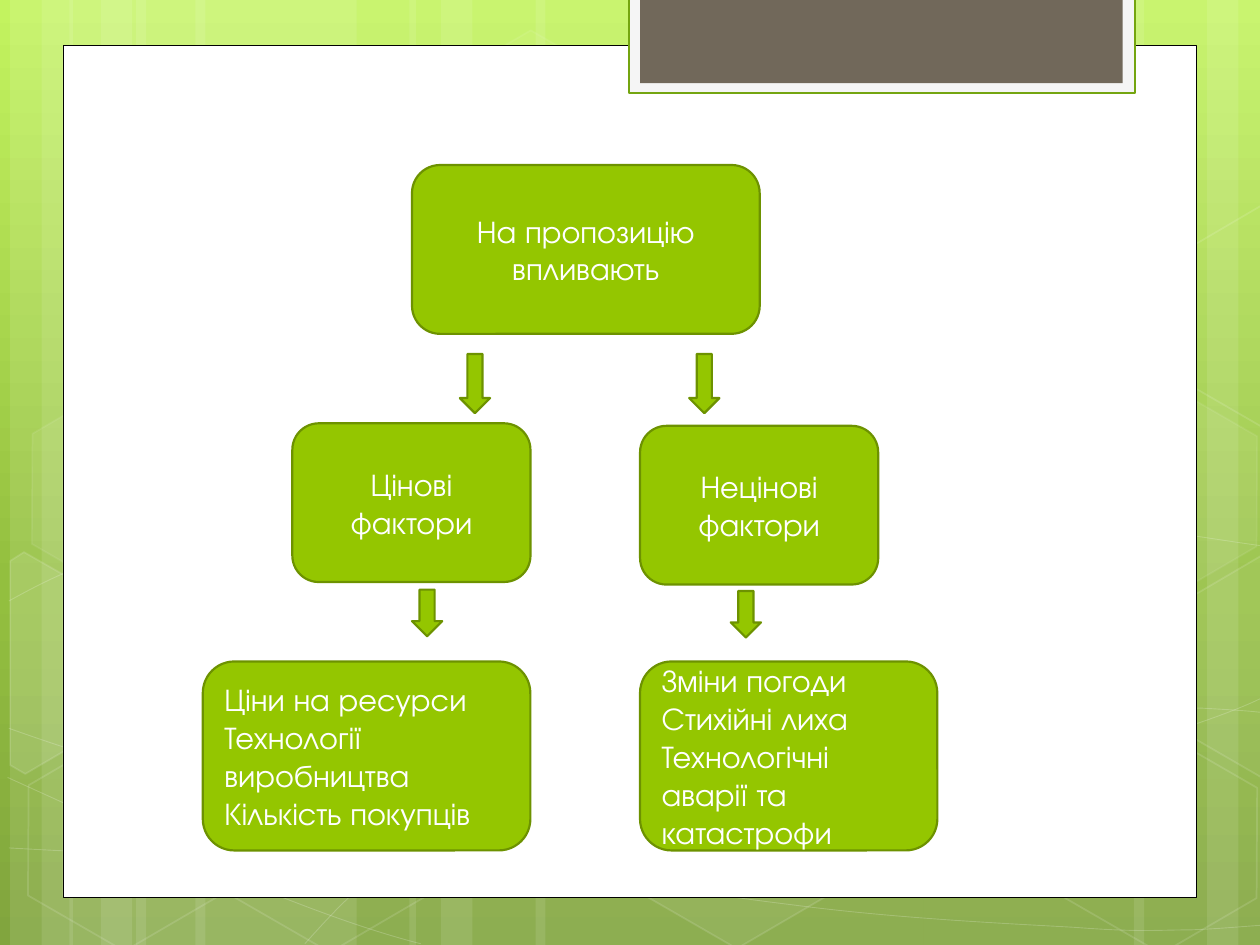
from copy import deepcopy
from math import cos, radians, sin
from lxml.etree import SubElement
from pptx import Presentation
from pptx.dml.color import RGBColor
from pptx.enum.shapes import MSO_SHAPE as Kind
from pptx.enum.text import MSO_ANCHOR as Anchor, PP_ALIGN as Align
from pptx.oxml.ns import qn
from pptx.util import Inches, Pt

WHITE = RGBColor(0xFF, 0xFF, 0xFF)
BLACK = RGBColor(0x00, 0x00, 0x00)
GREEN = RGBColor(0x94, 0xC6, 0x00)
EDGE = RGBColor(0x6D, 0x92, 0x00)
PALE = RGBColor(0xF5, 0xF5, 0xF5)
RIM = RGBColor(0x74, 0xA5, 0x10)
BROWN = RGBColor(0x71, 0x68, 0x5A)
SKY = [
    (0, RGBColor(0xC3, 0xF3, 0x5F)),
    (0.62, RGBColor(0x93, 0xBF, 0x3F)),
    (1, RGBColor(0x81, 0xA5, 0x3E)),
]

FONT = {"name": "TeX Gyre Adventor", "size": Pt(18)}
FRAME = {"word_wrap": True, "vertical_anchor": Anchor.MIDDLE}
TILT = 30

BOXES = [
    (3.27, 1.31, 2.76, 1.34, Align.CENTER, ["На пропозицію впливають"]),
    (2.32, 3.36, 1.89, 1.26, Align.CENTER, ["Цінові фактори"]),
    (5.08, 3.38, 1.89, 1.26, Align.CENTER, ["Нецінові фактори"]),
    (1.61, 5.25, 2.6, 1.5, Align.LEFT,
     ["Ціни на ресурси", "Технології виробництва", "Кількість покупців"]),
    (5.08, 5.25, 2.36, 1.5, Align.LEFT,
     ["Зміни погоди", "Стихійні лиха", "Технологічні аварії та катастрофи"]),
]
ARROWS = [(5.47, 2.81, 0.47), (3.65, 2.81, 0.47), (3.27, 4.68, 0.37), (5.8, 4.69, 0.37)]

BANDS = [
    (1.08, 1.75), (0.08, 0.5), (0.33, 0.83), (1.55, 1.75), (0.55, 0.5), (0.8, 0.83),
    (7.33, 1.75), (9.58, 0.5), (9, 0.83), (4.25, 3.08), (3.25, 0.5), (3.5, 0.83),
]
CURVES = [
    [(0.07, 6.73), (0.61, 6.76), (1.15, 6.79), (1.9, 6.78), (2.65, 6.77), (3.58, 6.75),
     (4.58, 6.65), (5.58, 6.55), (7, 6.36), (7.92, 6.17), (8.83, 5.98), (9.77, 5.68),
     (10.07, 5.51)],
    [(0.07, 4.77), (0.36, 4.61), (0.65, 4.46), (1.21, 4.31), (1.78, 4.16), (2.59, 3.94),
     (3.47, 3.87), (4.36, 3.8), (5.44, 3.79), (6.54, 3.87), (7.64, 3.95), (9.47, 4.26),
     (10.07, 4.34)],
    [(0.06, 6.17), (1.27, 6.72), (2.47, 7.27), (3.34, 7.49)],
    [(0.07, 5.78), (0.38, 5.89), (0.7, 6), (1.28, 6.16), (1.86, 6.31), (2.73, 6.56),
     (3.57, 6.73), (4.4, 6.9), (5.45, 7.08), (6.28, 7.18), (7.11, 7.29), (8, 7.33),
     (8.53, 7.36), (9.05, 7.4), (9.19, 7.38), (9.45, 7.38), (9.71, 7.37), (9.89, 7.35),
     (10.07, 7.34)],
    [(2.42, 7.49), (2.6, 7.29), (2.78, 7.09), (3.02, 6.91), (3.26, 6.73), (3.6, 6.53),
     (3.88, 6.39), (4.16, 6.25), (4.33, 6.19), (4.7, 6.09), (5.06, 5.99), (5.73, 5.85),
     (6.08, 5.78), (6.44, 5.71), (6.49, 5.71), (6.8, 5.69), (7.11, 5.66), (7.6, 5.63),
     (7.94, 5.62), (8.29, 5.61), (8.86, 5.62), (8.86, 5.62), (9.08, 5.62), (9.31, 5.62),
     (9.53, 5.62), (9.71, 5.63), (9.88, 5.64), (9.97, 5.65), (10.06, 5.66), (10.03, 5.65),
     (10.06, 5.66)],
]
HEXES = [
    (3.34, 0.36, 4, 8), (4.97, 5.89, 6, 12), (0.11, 5.91, None, 12), (0.14, 3.12, 7, 8),
    (1.74, 5.92, None, 12), (8.34, 5.93, None, 12), (8.34, 3.14, 7, 8),
]
SHARDS = [
    ((0.36, 5.35), 10, [(0.08, 4.45), (0.19, 4.38), (0.96, 4.82), (0.95, 5.7),
                        (0.2, 6.14), (0.08, 6.07)]),
    ((9.85, 5.2), 4, [(9.26, 4.85), (10.01, 4.41), (10.09, 4.46), (10.09, 6.13),
                      (10.02, 6.17), (9.26, 5.73)]),
    ((9.85, 2.41), None, [(9.26, 2.07), (10.01, 1.63), (10.1, 1.68), (10.09, 3.35),
                          (10.02, 3.39), (9.26, 2.95)]),
]


def fade(part, alpha):
    if alpha is not None:
        for tint in part.xpath("./a:solidFill/a:srgbClr"):
            SubElement(tint, qn("a:alpha")).set("val", str(alpha * 1000))


def paint(shape, fill=None, line=None, width=1.25, clear=None, thin=None):
    shape.shadow.inherit = False
    if fill is None:
        shape.fill.background()
    else:
        shape.fill.solid()
        shape.fill.fore_color.rgb = fill
        fade(shape._element.spPr, clear)
    if line is None:
        shape.line.fill.background()
    else:
        shape.line.color.rgb = line
        shape.line.width = Pt(width)
        fade(shape.line._ln, thin)
    return shape


def place(kind, *rect, **look):
    return paint(shapes.add_shape(kind, *map(Inches, rect)), **look)


def trace(points, close, **look):
    spots = [(Inches(x), Inches(y)) for x, y in points]
    pen = shapes.build_freeform(*spots[0])
    pen.add_line_segments(spots[1:], close=close)
    return paint(pen.convert_to_shape(), **look)


def bend(shape):
    route = shape._element.xpath(".//a:path")[0]
    legs = route.findall(qn("a:lnTo"))
    for i in range(0, len(legs), 3):
        arc = SubElement(route, qn("a:cubicBezTo"))
        for leg in legs[i:i + 3]:
            arc.append(leg[0])
            route.remove(leg)


def turn(point, hub, angle):
    dx, dy = point[0] - hub[0], point[1] - hub[1]
    c, s = cos(radians(angle)), sin(radians(angle))
    return hub[0] + dx * c - dy * s, hub[1] + dx * s + dy * c


def write(shape, lines, align):
    frame = shape.text_frame
    for key, value in FRAME.items():
        setattr(frame, key, value)
    frame.text = "\n".join(lines)
    for para in frame.paragraphs:
        para.alignment = align
        for key, value in FONT.items():
            setattr(para.runs[0].font, key, value)
        para.runs[0].font.color.rgb = WHITE


deck = Presentation()
deck.slide_width, deck.slide_height = Inches(10), Inches(7.5)
slide = deck.slides.add_slide(deck.slide_layouts[6])
shapes = slide.shapes

back = slide.background.fill
back.gradient()
back.gradient_angle = 270
stops = slide._element.xpath(".//a:gsLst")[0]
stops.append(deepcopy(stops[0]))
for stop, (spot, tint) in zip(back.gradient_stops, SKY):
    stop.position = spot
    stop.color.rgb = tint

for x, wide in BANDS:
    place(Kind.RECTANGLE, x, 0, wide, 7.5, fill=WHITE, clear=10)
for knots in CURVES:
    bend(trace(knots, False, line=WHITE, width=0.5, thin=20))
for x, y, clear, thin in HEXES:
    cell = place(Kind.HEXAGON, x, y, 1.75, 1.52, fill=WHITE if clear else None,
                 clear=clear, line=WHITE, width=1, thin=thin)
    cell.rotation = TILT
    cell.adjustments[0] = 0.285
for hub, clear, points in SHARDS:
    shard = trace([turn(p, hub, -TILT) for p in points], True,
                  fill=WHITE if clear else None, clear=clear,
                  line=WHITE, width=1, thin=12)
    shard.rotation = TILT

place(Kind.RECTANGLE, 0.5, 0.36, 9, 6.76, fill=WHITE, line=BLACK, width=0.5)
place(Kind.RECTANGLE, 4.99, -0.02, 4.02, 0.76, fill=PALE, line=RIM)
place(Kind.RECTANGLE, 5.08, -0.02, 3.83, 0.68, fill=BROWN)

for x, y, wide, high, align, lines in BOXES:
    box = place(Kind.ROUNDED_RECTANGLE, x, y, wide, high, fill=GREEN, line=EDGE)
    write(box, lines, align)
for x, y, high in ARROWS:
    place(Kind.DOWN_ARROW, x, y, 0.24, high, fill=GREEN, line=EDGE)

deck.save("out.pptx")
